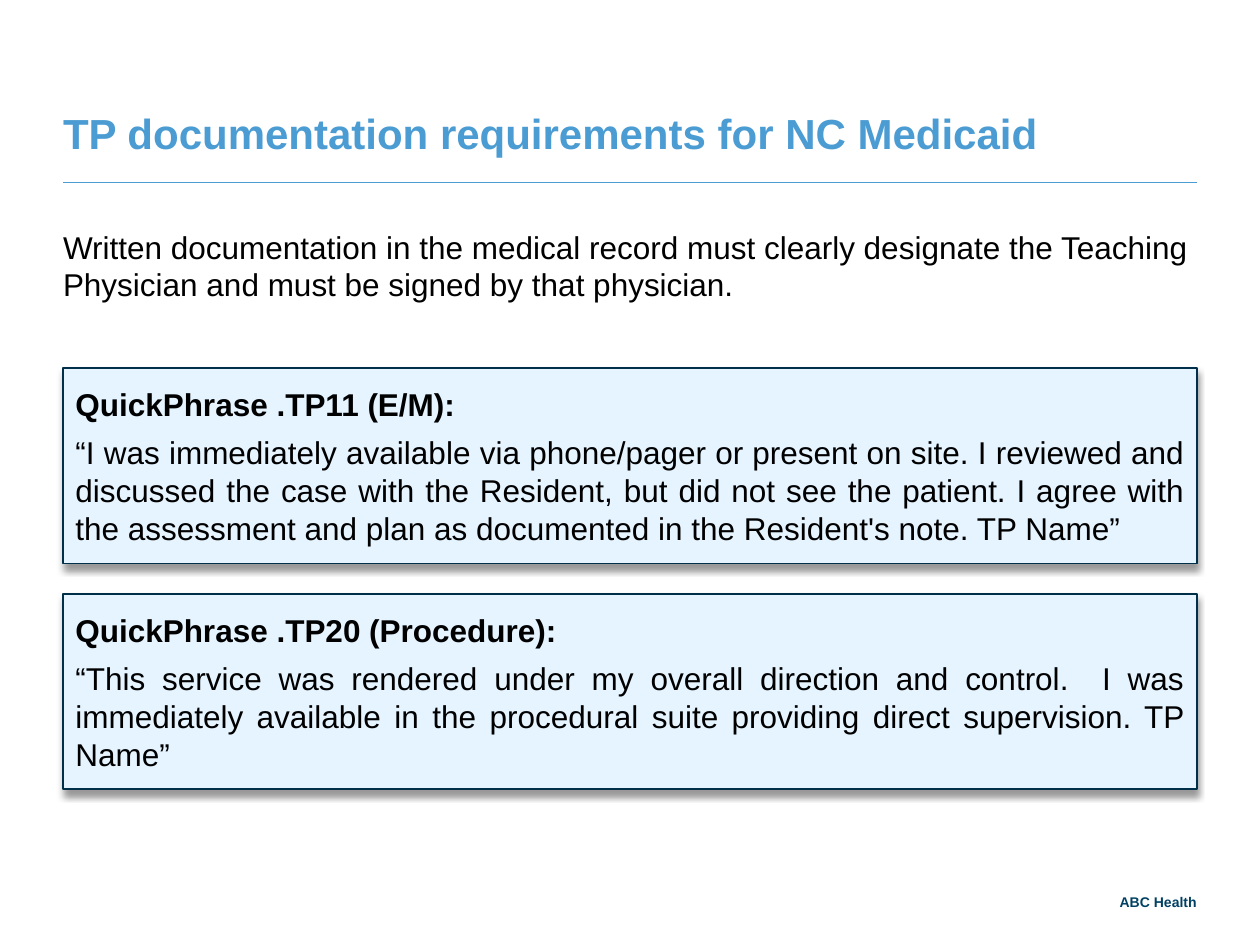
import pptx
import pptx.dml.color
import pptx.enum.shapes
import pptx.enum.text
import pptx.oxml
import pptx.oxml.ns
import pptx.util
from pptx.util import Cm, Pt

RGB = pptx.dml.color.RGBColor
ALIGN = pptx.enum.text.PP_ALIGN
ANCHOR = pptx.enum.text.MSO_ANCHOR

BLACK = RGB(0x00, 0x00, 0x00)
SKY = RGB(0x4B, 0x9C, 0xD3)
NAVY = RGB(0x00, 0x41, 0x63)
EDGE = RGB(0x00, 0x30, 0x49)
PALE = RGB(0xE5, 0xF4, 0xFF)

LEFT, WIDTH = Cm(1.27), Cm(22.86)
CARD_TOP, CARD_HIGH, CARD_STEP = Cm(7.42), Cm(3.94), Cm(4.55)

INTRO = ("Written documentation in the medical record must clearly designate "
         "the Teaching Physician and must be signed by that physician.")
CARDS = [
    ("QuickPhrase .TP11 (E/M):",
     "“I was immediately available via phone/pager or present on site. "
     "I reviewed and discussed the case with the Resident, but did not see "
     "the patient. I agree with the assessment and plan as documented in the "
     "Resident's note. TP Name”"),
    ("QuickPhrase .TP20 (Procedure):",
     "“This service was rendered under my overall direction and control.  "
     "I was immediately available in the procedural suite providing direct "
     "supervision. TP Name”"),
]

SHADOW = (
    f'<a:outerShdw {pptx.oxml.ns.nsdecls("a")} blurRad="{Pt(4)}" '
    f'dist="{Pt(3)}" dir="5400000" rotWithShape="0">'
    '<a:srgbClr val="000000"><a:alpha val="40000"/></a:srgbClr>'
    '</a:outerShdw>')


def place(shape, box):
    shape.left, shape.top, shape.width, shape.height = box


def inset(frame, left=0, top=0, right=0, bottom=0):
    frame.margin_left, frame.margin_top = left, top
    frame.margin_right, frame.margin_bottom = right, bottom
    frame.word_wrap = True
    frame.auto_size = pptx.enum.text.MSO_AUTO_SIZE.NONE


def style(para, size, color, bold=False, align=ALIGN.LEFT, after=0):
    para.alignment = align
    para.space_before, para.space_after = Pt(0), Pt(after)
    for run in para.runs:
        font = run.font
        font.name, font.size, font.bold = "Arial", Pt(size), bold
        font.color.rgb = color


def add_title(slide, box, text):
    title = slide.shapes.title
    place(title, box)
    frame = title.text_frame
    inset(frame, top=Cm(2.41), right=Cm(3.81))
    frame.vertical_anchor = ANCHOR.BOTTOM
    frame.text = text
    para = frame.paragraphs[0]
    style(para, 24, SKY, bold=True)
    para.line_spacing = Pt(28)


def add_rule(slide, left, top, width):
    rule = slide.shapes.add_connector(
        pptx.enum.shapes.MSO_CONNECTOR.STRAIGHT, left, top, left + width, top)
    rule.line.color.rgb = SKY
    rule.line.width = Pt(0.5)
    rule._element.spPr.append(pptx.oxml.parse_xml(
        f'<a:effectLst {pptx.oxml.ns.nsdecls("a")}/>'))


def add_intro(slide, box, text):
    body = slide.placeholders[1]
    place(body, box)
    frame = body.text_frame
    inset(frame, top=Cm(0.2))
    frame.text = text
    para = frame.paragraphs[0]
    style(para, 18, BLACK, after=9)
    props = para._p.get_or_add_pPr()
    props.set("marL", "0")
    props.set("indent", "0")
    props.append(pptx.oxml.parse_xml(
        f'<a:buNone {pptx.oxml.ns.nsdecls("a")}/>'))


def add_card(slide, box, head, quote):
    card = slide.shapes.add_shape(
        pptx.enum.shapes.MSO_SHAPE.RECTANGLE, *box)
    card.fill.solid()
    card.fill.fore_color.rgb = PALE
    card.line.color.rgb = EDGE
    card.line.width = Pt(1)
    card.shadow.inherit = False
    effects = card._element.spPr.find(pptx.oxml.ns.qn("a:effectLst"))
    effects.append(pptx.oxml.parse_xml(SHADOW))
    frame = card.text_frame
    frame.word_wrap = True
    frame.vertical_anchor = ANCHOR.MIDDLE
    frame.text = head
    style(frame.paragraphs[0], 18, BLACK, bold=True, after=6)
    para = frame.add_paragraph()
    para.text = quote
    style(para, 18, BLACK, align=ALIGN.JUSTIFY, after=6)


def add_footer(slide, box, text):
    frame = slide.shapes.add_textbox(*box).text_frame
    inset(frame)
    frame.vertical_anchor = ANCHOR.BOTTOM
    frame.text = text
    style(frame.paragraphs[0], 8, NAVY, bold=True, align=ALIGN.RIGHT)


def main():
    deck = pptx.Presentation()
    deck.slide_width, deck.slide_height = Cm(25.4), Cm(19.05)
    slide = deck.slides.add_slide(deck.slide_layouts[1])
    add_footer(slide, (Cm(21.01), Cm(17.78), Cm(3.12), Cm(0.58)),
               "ABC Health")
    add_rule(slide, LEFT, Cm(3.68), WIDTH)
    add_intro(slide, (LEFT, Cm(4.39), WIDTH, Cm(12.98)), INTRO)
    add_title(slide, (LEFT, Cm(0.97), Cm(25.63), Cm(2.01)),
              "TP documentation requirements for NC Medicaid")
    for row, (head, quote) in enumerate(CARDS):
        top = CARD_TOP + row * CARD_STEP
        add_card(slide, (LEFT, top, WIDTH, CARD_HIGH), head, quote)
    deck.save("out.pptx")


if __name__ == "__main__":
    main()
